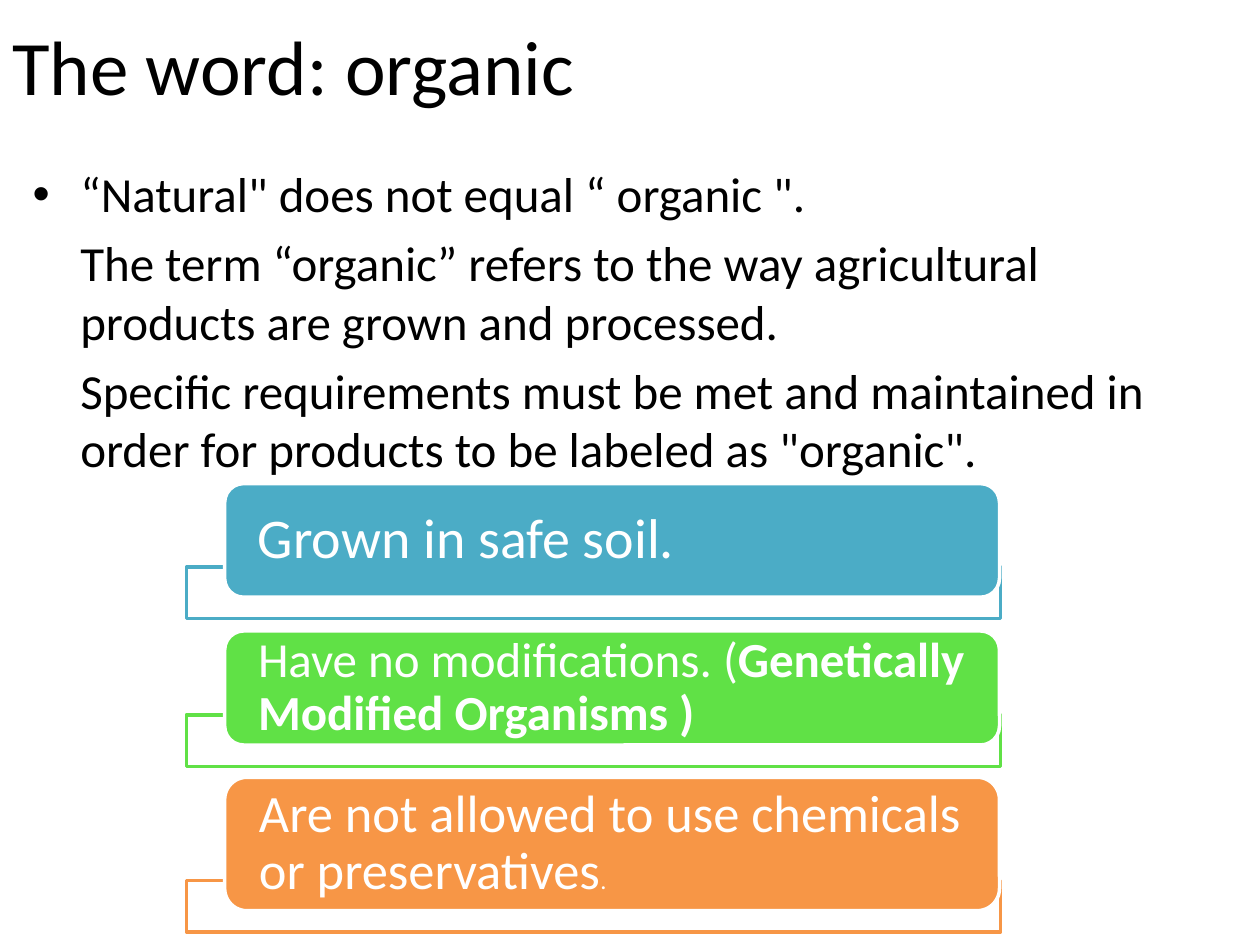
from lxml import etree
from pptx import Presentation
from pptx.dml.color import RGBColor
from pptx.enum.shapes import MSO_SHAPE
from pptx.enum.text import MSO_ANCHOR, PP_ALIGN
from pptx.oxml.ns import qn
from pptx.util import Cm, Pt

RECTANGLE = MSO_SHAPE.RECTANGLE
ROUNDED = MSO_SHAPE.ROUNDED_RECTANGLE
MIDDLE = MSO_ANCHOR.MIDDLE
LEFT = PP_ALIGN.LEFT

FONT = "Calibri"
COLORS = {
    "text": "000000",
    "white": "FFFFFF",
    "soil": "4BACC6",
    "modification": "60E146",
    "chemical": "F79646",
}


def style(font, size, color):
    font.name = FONT
    font.size = Pt(size)
    font.color.rgb = RGBColor.from_string(COLORS[color])


def add_box(kind, left, top, width, height, fill, line):
    shape = slide.shapes.add_shape(kind, Cm(left), Cm(top), Cm(width), Cm(height))
    shape.shadow.inherit = False
    shape.fill.solid()
    shape.fill.fore_color.rgb = RGBColor.from_string(COLORS[fill])
    shape.line.color.rgb = RGBColor.from_string(COLORS[line])
    shape.line.width = Pt(2)
    return shape


presentation = Presentation()
presentation.slide_width = Cm(25.4)
presentation.slide_height = Cm(19.05)
slide = presentation.slides.add_slide(presentation.slide_layouts[6])

# Title
title = slide.shapes.add_textbox(Cm(0), Cm(0), Cm(17.9), Cm(2.6)).text_frame
title.word_wrap = True
title.vertical_anchor = MIDDLE
title.text = "The word: organic"
style(title.paragraphs[0].font, 44, "text")

# Body: one bulleted line, then two paragraphs aligned with its text
BODY_TEXTS = [
    "“Natural\" does not equal “ organic \".",
    "The term “organic” refers to the way agricultural products are grown and processed.",
    "Specific requirements must be met and maintained in order for products "
    "to be labeled as \"organic\".",
]
body = slide.shapes.add_textbox(Cm(0.41), Cm(3.18), Cm(24.4), Cm(6.55)).text_frame
body.word_wrap = True
for index, text in enumerate(BODY_TEXTS):
    paragraph = body.paragraphs[0] if index == 0 else body.add_paragraph()
    paragraph.text = text
    properties = paragraph._p.get_or_add_pPr()
    properties.set("marL", str(Cm(0.96)))
    if index == 0:
        properties.set("indent", str(Cm(-0.96)))
        etree.SubElement(properties, qn("a:buFont"), typeface="Arial")
        etree.SubElement(properties, qn("a:buChar"), char="•")
    else:
        paragraph.space_before = Pt(5.6)
    style(paragraph.font, 28, "text")

# Requirement cards: top, height, color, text size, runs as (text, bold, own size)
CARDS = [
    (9.75, 2.29, "soil", 32, [("Grown in safe soil.", None, None)]),
    (12.72, 2.3, "modification", 28, [
        ("Have no modifications. (", None, None),
        ("Genetically Modified Organisms )", True, None),
    ]),
    (15.67, 2.69, "chemical", 30, [
        ("Are not allowed to use chemicals or preservatives", None, None),
        (".", None, 14),
    ]),
]
FRAME_OVERLAP = 0.61

for top, height, color, size, runs in CARDS:
    frame = add_box(RECTANGLE, 3.76, top + height - FRAME_OVERLAP, 16.41, 1.04, "white", color)
    fill_color = frame._element.spPr.find(qn("a:solidFill"))[0]
    etree.SubElement(fill_color, qn("a:alpha"), val="90000")

    card = add_box(ROUNDED, 4.53, top, 15.62, height, color, "white")
    text_frame = card.text_frame
    text_frame.word_wrap = True
    text_frame.vertical_anchor = MIDDLE
    text_frame.margin_left = text_frame.margin_right = Cm(0.56)
    text_frame.margin_top = text_frame.margin_bottom = 0
    paragraph = text_frame.paragraphs[0]
    paragraph.alignment = LEFT
    paragraph.line_spacing = 0.9
    style(paragraph.font, size, "white")
    for text, bold, own_size in runs:
        run = paragraph.add_run()
        run.text = text
        run.font.bold = bold
        if own_size:
            run.font.size = Pt(own_size)

presentation.save("out.pptx")
